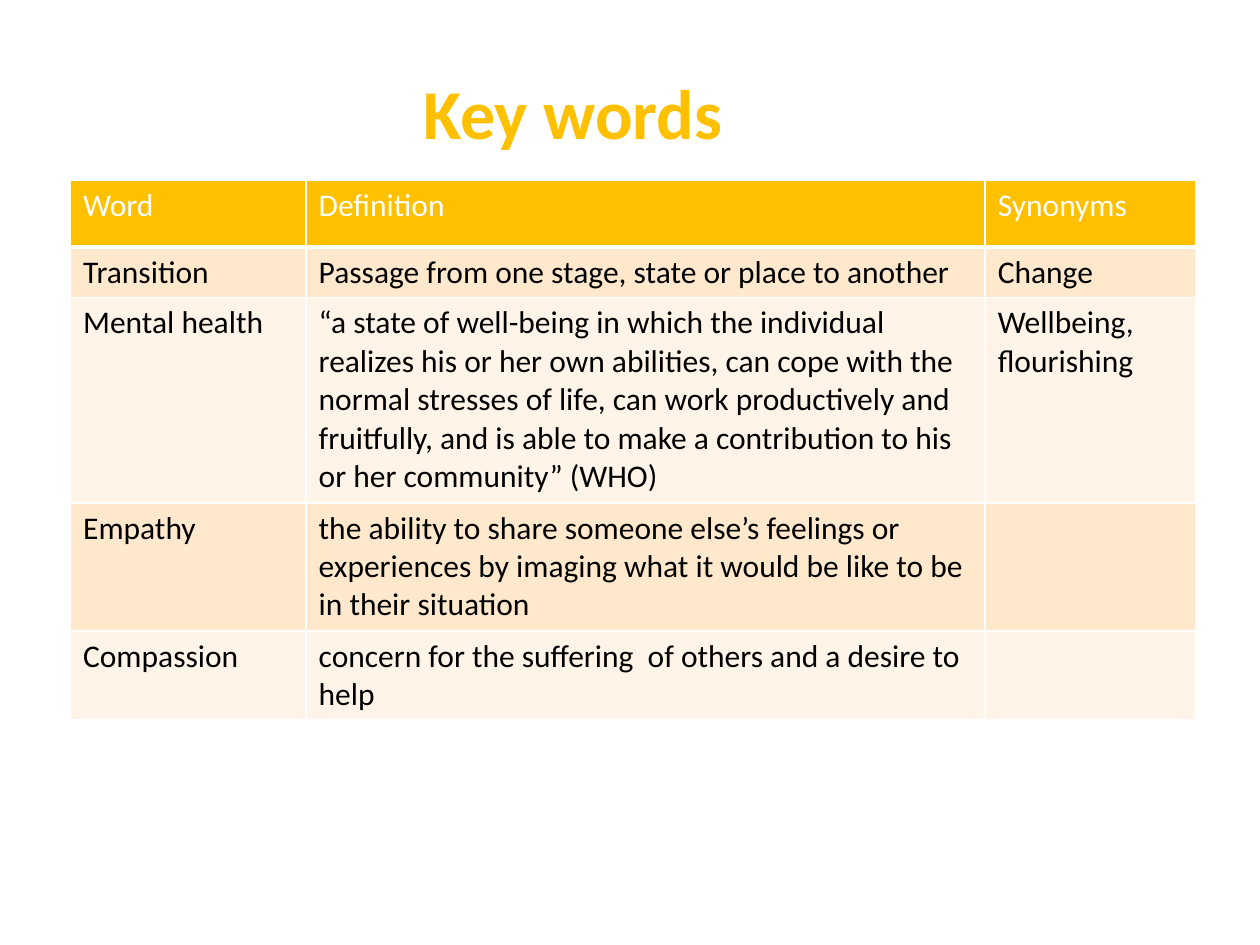
from lxml.etree import SubElement
from pptx import Presentation
from pptx.dml.color import RGBColor
from pptx.enum.text import MSO_ANCHOR, PP_ALIGN
from pptx.oxml.ns import qn
from pptx.util import Inches, Pt

# Content
TITLE = "Key words"
ROWS = [
    ("Word", "Definition", "Synonyms"),
    ("Transition", "Passage from one stage, state or place to another", "Change"),
    ("Mental health",
     "“a state of well-being in which the individual realizes his or her own "
     "abilities, can cope with the normal stresses of life, can work productively "
     "and fruitfully, and is able to make a contribution to his or her community” (WHO)",
     "Wellbeing, flourishing"),
    ("Empathy",
     "the ability to share someone else’s feelings or experiences by imaging "
     "what it would be like to be in their situation", ""),
    ("Compassion", "concern for the suffering  of others and a desire to help", ""),
]
COL_WIDTHS = [1.87, 5.39, 1.67]
ROW_HEIGHTS = [0.53, 0.4, 1.63, 1.02, 0.7]

THEME = {
    "font": "Calibri", "title_size": 40, "body_size": 18,
    "accent": "FFC000", "text": "000000", "light": "FFFFFF",
    "bands": ["FFE8CC", "FFF4E7"],
}


def write(tf, text, size=THEME["body_size"], color=THEME["text"], bold=False,
          align=PP_ALIGN.LEFT, spacing=None):
    p = tf.paragraphs[0]
    p.alignment = align
    p.line_spacing = spacing
    p.font.size = Pt(size)
    if text:
        r = p.add_run()
        r.text = text
        r.font.name = THEME["font"]
        r.font.size = Pt(size)
        r.font.bold = bold
        r.font.color.rgb = RGBColor.from_string(color)


def set_borders(cell, widths):
    """Draw the cell's borders; call before the fill, as XML order matters."""
    tcPr = cell._tc.get_or_add_tcPr()
    for side, width in widths.items():
        ln = SubElement(tcPr, qn(f"a:ln{side}"), w=str(Pt(width)))
        fill = SubElement(ln, qn("a:solidFill"))
        SubElement(fill, qn("a:srgbClr"), val=THEME["light"])


prs = Presentation()
prs.slide_width, prs.slide_height = Inches(10), Inches(7.5)
s = prs.slides.add_slide(prs.slide_layouts[6])

# Title, set slightly left of centre by a wider right margin
sp = s.shapes.add_textbox(Inches(0.36), Inches(0.2), Inches(8.62), Inches(1.45))
tf = sp.text_frame
tf.word_wrap = True
tf.vertical_anchor = MSO_ANCHOR.MIDDLE
tf.margin_right = Inches(0.35)
write(tf, TITLE, size=THEME["title_size"], color=THEME["accent"], bold=True,
      align=PP_ALIGN.CENTER, spacing=0.9)

# Table of key words
table = s.shapes.add_table(
    len(ROWS), len(COL_WIDTHS), Inches(0.56), Inches(1.43),
    Inches(sum(COL_WIDTHS)), Inches(sum(ROW_HEIGHTS))).table
table.first_row = table.horz_banding = False
for col, width in zip(table.columns, COL_WIDTHS):
    col.width = Inches(width)
for row, height in zip(table.rows, ROW_HEIGHTS):
    row.height = Inches(height)

for i, words in enumerate(ROWS):
    header = i == 0
    for j, text in enumerate(words):
        cell = table.cell(i, j)
        set_borders(cell, {"L": 1, "R": 1, "T": 3 if i == 1 else 1,
                           "B": 3 if header else 1})
        cell.fill.solid()
        cell.fill.fore_color.rgb = RGBColor.from_string(
            THEME["accent"] if header else THEME["bands"][(i - 1) % 2])
        write(cell.text_frame, text, color=THEME["light" if header else "text"])

prs.save("out.pptx")
